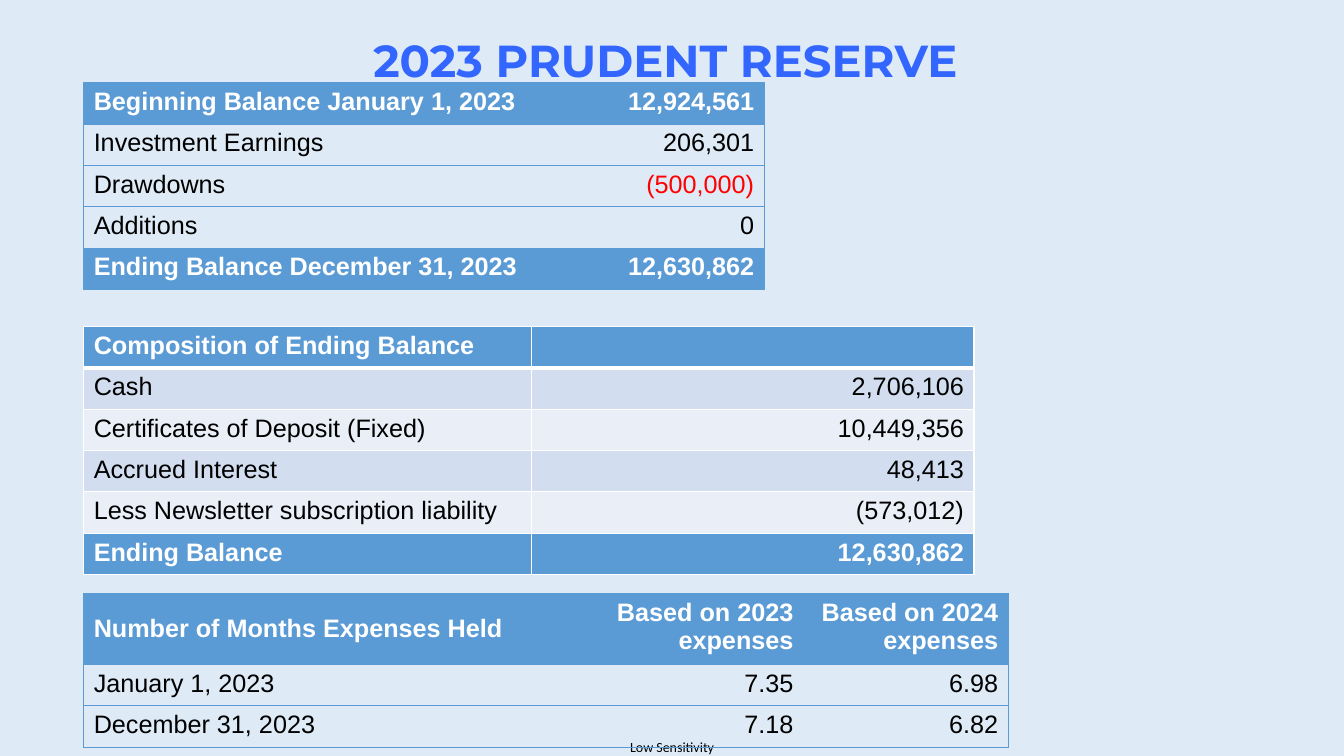
from lxml import etree
from pptx import Presentation
from pptx import util as u
from pptx.dml import color
from pptx.enum import text
from pptx.oxml import ns

BACKGROUND = color.RGBColor(0xDE, 0xEB, 0xF7)
TITLE_BLUE = color.RGBColor(0x33, 0x66, 0xFF)
BLUE = color.RGBColor(0x5B, 0x9B, 0xD5)
BAND_DARK = color.RGBColor(0xD2, 0xDE, 0xEF)
BAND_LIGHT = color.RGBColor(0xEA, 0xEF, 0xF7)
WHITE = color.RGBColor(0xFF, 0xFF, 0xFF)
BLACK = color.RGBColor(0, 0, 0)
RED = color.RGBColor(0xFF, 0, 0)

ROW_HEIGHT = 0.41


def write(frame, words, alignment, rgb, **font_format):
    paragraph = frame.paragraphs[0]
    paragraph.alignment = alignment
    run = paragraph.add_run()
    run.text = words
    run.font.color.rgb = rgb
    for name, value in font_format.items():
        setattr(run.font, name, value)


def set_border(cell, side, rgb, width):
    line = etree.SubElement(cell._tc.get_or_add_tcPr(), ns.qn(f"a:ln{side}"), w=str(u.Pt(width)))
    if width:
        fill = etree.SubElement(line, ns.qn("a:solidFill"))
        etree.SubElement(fill, ns.qn("a:srgbClr"), val=str(rgb))
    else:
        etree.SubElement(line, ns.qn("a:noFill"))


presentation = Presentation()
presentation.slide_width = u.Inches(13.33)
presentation.slide_height = u.Inches(7.5)
slide = presentation.slides.add_slide(presentation.slide_layouts[6])
slide.background.fill.solid()
slide.background.fill.fore_color.rgb = BACKGROUND

labels = [
    ("Low Sensitivity", (6.25, 7.33, 0.87, 0.17), 0, False, text.MSO_ANCHOR.TOP,
     text.PP_ALIGN.LEFT, BLACK, {"size": u.Pt(10), "name": "Calibri"}),
    ("2023 PRUDENT RESERVE ", (0, 0.04, 13.33, 1.17), 0.1, True, text.MSO_ANCHOR.MIDDLE,
     text.PP_ALIGN.CENTER, TITLE_BLUE, {"size": u.Pt(32), "name": "Montserrat", "bold": True}),
]
for words, place, margin, wrap, anchor, alignment, rgb, font_format in labels:
    frame = slide.shapes.add_textbox(*map(u.Inches, place)).text_frame
    frame_format = {"word_wrap": wrap, "vertical_anchor": anchor, "margin_left": u.Inches(margin),
                    "margin_right": u.Inches(margin), "margin_top": u.Inches(margin / 2),
                    "margin_bottom": u.Inches(margin / 2)}
    for name, value in frame_format.items():
        setattr(frame, name, value)
    frame.paragraphs[0].line_spacing = 0.9 if wrap else 1.0
    write(frame, words, alignment, rgb, **font_format)

tables = [
    {"top": 0.82, "columns": [4.83, 1.92], "header": ROW_HEIGHT, "filled": {0, 4},
     "bands": None, "line": BLUE, "width": 0.5, "inner": 0, "under_header": 0.5,
     "rows": [("Beginning Balance January 1, 2023", "12,924,561"),
              ("Investment Earnings", "206,301"),
              ("Drawdowns", "(500,000)"),
              ("Additions", "0"),
              ("Ending Balance December 31, 2023", "12,630,862")]},
    {"top": 3.24, "columns": [4.44, 4.39], "header": ROW_HEIGHT, "filled": {0, 5},
     "bands": (BAND_LIGHT, BAND_DARK), "line": WHITE, "width": 1, "inner": 1, "under_header": 3,
     "rows": [("Composition of Ending Balance", ""),
              ("Cash", "2,706,106"),
              ("Certificates of Deposit (Fixed)", "10,449,356"),
              ("Accrued Interest", "48,413"),
              ("Less Newsletter subscription liability", "(573,012)"),
              ("Ending Balance", "12,630,862")]},
    {"top": 5.89, "columns": [5.11, 2.03, 2.03], "header": 0.65, "filled": {0},
     "bands": None, "line": BLUE, "width": 0.5, "inner": 0, "under_header": 0.5,
     "rows": [("Number of Months Expenses Held", "Based on 2023 expenses", "Based on 2024 expenses"),
              ("January 1, 2023", "7.35", "6.98"),
              ("December 31, 2023", "7.18", "6.82")]},
]

for data in tables:
    rows, columns = data["rows"], data["columns"]
    heights = [data["header"]] + [ROW_HEIGHT] * (len(rows) - 1)
    table = slide.shapes.add_table(
        len(rows), len(columns), u.Inches(0.83), u.Inches(data["top"]),
        u.Inches(sum(columns)), u.Inches(sum(heights))).table
    table.first_row = table.horz_banding = False
    for column, width in zip(table.columns, columns):
        column.width = u.Inches(width)
    for row, height in zip(table.rows, heights):
        row.height = u.Inches(height)

    for r, values in enumerate(rows):
        for c, words in enumerate(values):
            cell = table.cell(r, c)
            strong = r in data["filled"]
            widths = {
                "L": data["width"] if c == 0 else data["inner"],
                "R": data["width"] if c == len(columns) - 1 else data["inner"],
                "T": data["under_header"] if r == 1 else data["width"],
                "B": data["under_header"] if r == 0 else data["width"],
            }
            for side, width in widths.items():
                set_border(cell, side, data["line"], width)

            if strong or data["bands"]:
                cell.fill.solid()
                cell.fill.fore_color.rgb = BLUE if strong else data["bands"][r % 2]
            else:
                cell.fill.background()

            if c == 0 and height != heights[r]:
                cell.vertical_anchor = text.MSO_ANCHOR.MIDDLE
            if words:
                rgb = WHITE if strong else RED if words == "(500,000)" else BLACK
                alignment = text.PP_ALIGN.RIGHT if c else text.PP_ALIGN.LEFT
                write(cell.text_frame, words, alignment, rgb,
                      size=u.Pt(18), name="Arial", bold=strong)

presentation.save("out.pptx")
